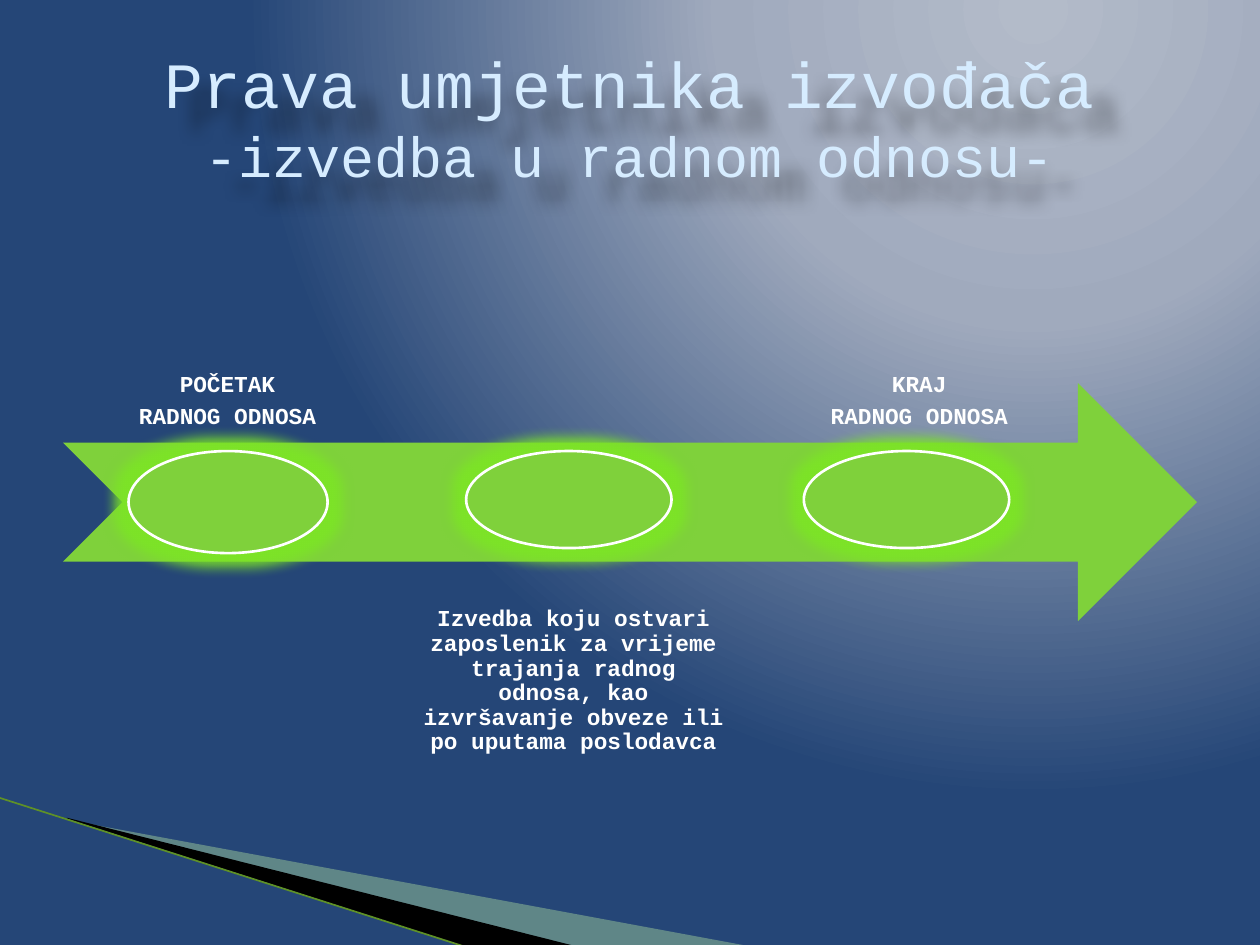
from lxml import etree
from pptx import Presentation
from pptx import util as u
from pptx.dml.color import RGBColor
from pptx.enum import shapes, text
from pptx.oxml import parse_xml
from pptx.oxml.ns import nsdecls, qn

FONT = "Courier New"
GREEN = "7FD13B"
WHITE = "FFFFFF"


def color(value):
    """Turn a hex string into a colour."""
    return RGBColor.from_string(value)


def box(left, top, width, height):
    """Give a box in inches as lengths."""
    return [u.Inches(value) for value in (left, top, width, height)]


def add_effect(shape, effect=""):
    """Give a shape or connector exactly the effect described."""
    properties = shape._element.spPr
    for old in properties.findall(qn("a:effectLst")):
        properties.remove(old)
    properties.append(parse_xml(f"<a:effectLst {nsdecls('a')}>{effect}</a:effectLst>"))


def paint(shape, fill, opacity=None):
    """Fill a shape without outline or shadow."""
    shape.shadow.inherit = False
    shape.fill.solid()
    shape.fill.fore_color.rgb = color(fill)
    shape.line.fill.background()
    if opacity is not None:
        tint = shape._element.spPr.find(qn("a:solidFill"))[0]
        etree.SubElement(tint, qn("a:alpha"), val=str(opacity * 1000))


def add_background(slide):
    """Set the round gradient centred at the top right."""
    stops = "".join(
        f'<a:gs pos="{place * 1000}"><a:srgbClr val="{value}"/></a:gs>'
        for place, value in ((0, "B3BBC9"), (40, "A0AABD"), (100, "254677")))
    gradient = parse_xml(
        f'<a:gradFill {nsdecls("a")} rotWithShape="1"><a:gsLst>{stops}</a:gsLst>'
        '<a:path path="circle"><a:fillToRect l="65000" t="0" r="0" b="98000"/>'
        "</a:path></a:gradFill>")
    slide.background.fill.solid()
    solid = slide.background._cSld.bg.bgPr.find(qn("a:solidFill"))
    solid.getparent().replace(solid, gradient)


def add_wedge(slide, corners, fill, opacity=None):
    """Draw a closed outline through corners given in inches."""
    start, *others = [(u.Inches(x), u.Inches(y)) for x, y in corners]
    builder = slide.shapes.build_freeform(*start)
    builder.add_line_segments(others, close=True)
    paint(builder.convert_to_shape(), fill, opacity)


def add_corner(slide):
    """Draw the wedges and the thin line at the bottom left."""
    add_wedge(slide, [(0.55, 6.51), (5.95, 7.51), (4.56, 7.51), (0.55, 6.5)], "B8E7A1", 40)
    add_wedge(slide, [(0.53, 6.49), (4.57, 7.51), (3.72, 7.52), (0.54, 6.5)], "000000")
    edge = slide.shapes.add_connector(
        shapes.MSO_CONNECTOR.STRAIGHT, *box(-0.01, 6.33, 3.71, 7.52))
    edge.line.color.rgb = color("5F9127")
    edge.line.width = u.Pt(0.95)
    add_effect(edge)


def add_title(slide, area, lines, sizes):
    """Write the two-line title with its soft shadow."""
    title = slide.shapes.add_textbox(*box(*area))
    frame = title.text_frame
    frame.word_wrap = True
    frame.vertical_anchor = text.MSO_ANCHOR.MIDDLE
    frame.text = "\v".join(lines)
    heading = frame.paragraphs[0]
    heading.alignment = text.PP_ALIGN.CENTER
    for run, size in zip(heading.runs, sizes):
        run.font.name = FONT
        run.font.size = u.Pt(size)
        run.font.color.rgb = color("D6ECFF")
    add_effect(title, f'<a:outerShdw blurRad="{u.Inches(0.12)}" dist="{u.Inches(0.25)}" '
                      'dir="2700000" algn="tl"><a:srgbClr val="000000">'
                      '<a:alpha val="40000"/></a:srgbClr></a:outerShdw>')


def add_stage(slide, area, words, anchor, oval_area):
    """Write one stage of the timeline and draw its glowing oval."""
    frame = slide.shapes.add_textbox(*box(*area)).text_frame
    frame.word_wrap = True
    frame.vertical_anchor = anchor
    frame.margin_left = frame.margin_right = u.Inches(0.1)
    frame.margin_top = frame.margin_bottom = u.Inches(0.1)
    frame.text = words
    for paragraph in frame.paragraphs:
        paragraph.alignment = text.PP_ALIGN.CENTER
        paragraph.line_spacing = 0.9
        paragraph.space_after = u.Pt(4.5)
        for run in paragraph.runs:
            run.font.name = FONT
            run.font.size = u.Pt(13)
            run.font.bold = True
            run.font.color.rgb = color(WHITE)
    oval = slide.shapes.add_shape(shapes.MSO_SHAPE.OVAL, *box(*oval_area))
    paint(oval, GREEN)
    oval.line.color.rgb = color(WHITE)
    oval.line.width = u.Pt(1.5)
    add_effect(oval, f'<a:glow rad="{u.Inches(0.2)}"><a:srgbClr val="7DE626">'
                     '<a:alpha val="90000"/></a:srgbClr></a:glow>')


def add_timeline(slide, left, top, width, height):
    """Draw the arrow with its three stages in the given box."""
    arrow = slide.shapes.add_shape(
        shapes.MSO_SHAPE.NOTCHED_RIGHT_ARROW, *box(left, top, width, height))
    paint(arrow, GREEN)
    above, below = text.MSO_ANCHOR.BOTTOM, text.MSO_ANCHOR.TOP
    stages = [
        ("POČETAK\nRADNOG ODNOSA", above, -1.42, 1.89, 0.52, 1.58, 0.81),
        ("Izvedba koju ostvari zaposlenik za vrijeme trajanja radnog odnosa, kao "
         "izvršavanje obveze ili po uputama poslodavca", below, 1.68, 1.63, 3.2, 1.63, 0.77),
        ("KRAJ\nRADNOG ODNOSA", above, -1.42, 1.89, 5.88, 1.63, 0.77),
    ]
    for index, (words, anchor, drop, tall, oval_x, oval_w, oval_h) in enumerate(stages):
        add_stage(slide, (left + index * 2.745, top + drop, 2.61, tall), words, anchor,
                  (left + oval_x, top + 0.54, oval_w, oval_h))


def main():
    """Build and save the slide."""
    deck = Presentation()
    deck.slide_width, deck.slide_height = u.Inches(10), u.Inches(7.5)
    slide = deck.slides.add_slide(deck.slide_layouts[6])
    add_background(slide)
    add_corner(slide)
    add_timeline(slide, 0.5, 3.04, 9, 1.89)
    add_title(slide, (0.5, 0.3, 9, 1.25),
              ["Prava umjetnika izvođača", "-izvedba u radnom odnosu-"], [36.9, 32.4])
    deck.save("out.pptx")


if __name__ == "__main__":
    main()
